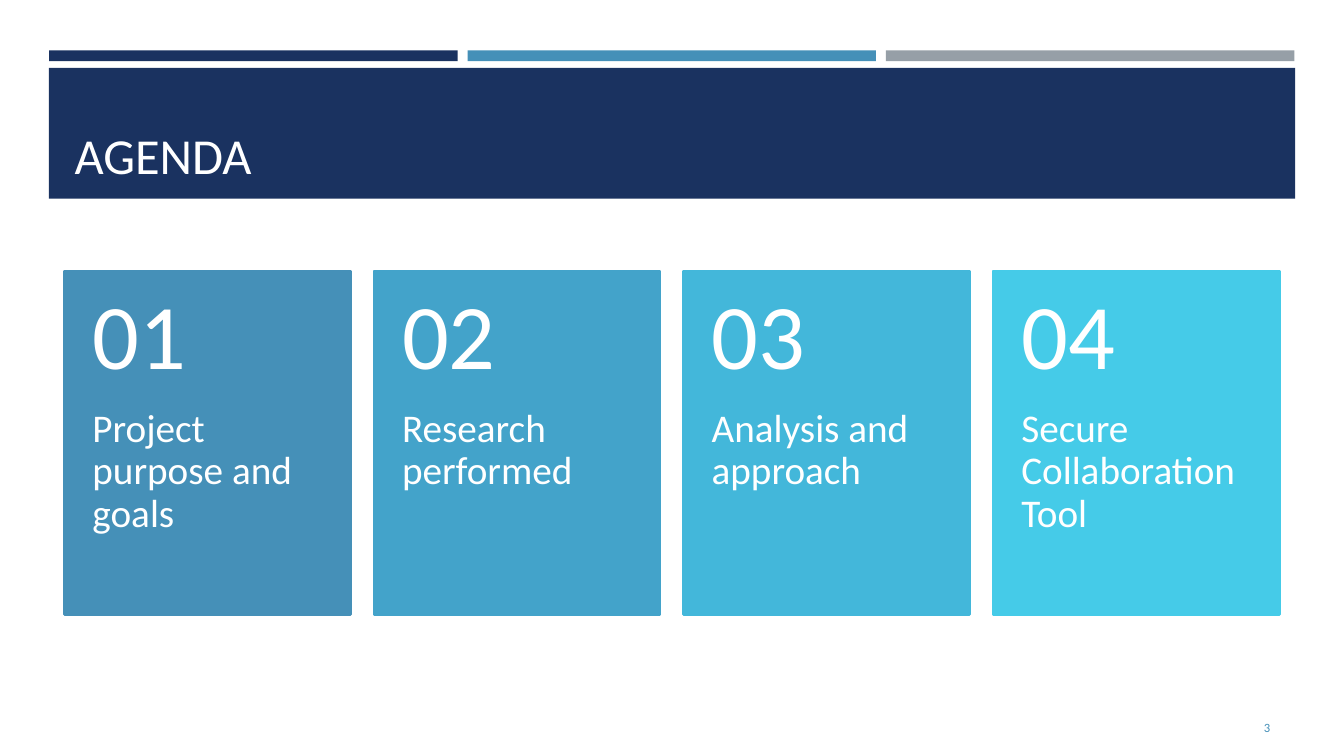
from pptx import Presentation
from pptx import util as u
from pptx.dml import color
from pptx.enum import shapes, text

COLORS = {
    "navy": "1A3260",
    "blue": "4590B8",
    "gray": "969FA7",
    "white": "FFFFFF",
    "card_2": "43A3CA",
    "card_3": "43B7DA",
    "card_4": "45CBE8",
}
FONT = "Calibri"
AGENDA = [
    ("Project purpose and goals", "blue"),
    ("Research performed", "card_2"),
    ("Analysis and approach", "card_3"),
    ("Secure Collaboration Tool", "card_4"),
]


def rgb(name):
    """Return the named palette colour."""
    return color.RGBColor.from_string(COLORS[name])


def add_block(slide, box, fill, border=None):
    """Draw a flat rectangle in the box, with an optional border in points."""
    block = slide.shapes.add_shape(shapes.MSO_SHAPE.RECTANGLE, *map(u.Cm, box))
    block.shadow.inherit = False
    block.fill.solid()
    block.fill.fore_color.rgb = rgb(fill)
    if border:
        block.line.color.rgb = rgb(fill)
        block.line.width = u.Pt(border)
    else:
        block.line.fill.background()


def add_words(slide, box, words, size, ink="white", anchor="TOP", align="LEFT",
              insets=(0.25, 0.13, 0.25, 0.13), spacing=1.0):
    """Write one paragraph of text in the box."""
    frame = slide.shapes.add_textbox(*map(u.Cm, box)).text_frame
    frame.word_wrap = True
    frame.vertical_anchor = getattr(text.MSO_ANCHOR, anchor)
    (frame.margin_left, frame.margin_top,
     frame.margin_right, frame.margin_bottom) = map(u.Cm, insets)
    paragraph = frame.paragraphs[0]
    paragraph.alignment = getattr(text.PP_ALIGN, align)
    paragraph.line_spacing = spacing
    run = paragraph.add_run()
    run.text = words
    run.font.name = FONT
    run.font.size = u.Pt(size)
    run.font.color.rgb = rgb(ink)


def add_accent_bars(slide, box, gap=0.25):
    """Split the box into three equal coloured bars."""
    left, top, width, height = box
    fills = ("navy", "blue", "gray")
    bar = (width - gap * (len(fills) - 1)) / len(fills)
    for index, fill in enumerate(fills):
        add_block(slide, (left + index * (bar + gap), top, bar, height), fill)


def add_banner(slide, box, title):
    """Fill the box with the banner and set the title at its foot."""
    left, top, width, height = box
    add_block(slide, box, "navy")
    add_words(slide, (left + 0.4, top + 0.25, width - 0.8, height - 0.48),
              title, 36, anchor="BOTTOM")


def add_card(slide, box, number, topic, fill):
    """Draw an agenda card with its number above its topic."""
    left, top, width, height = box
    number_height = height * 0.4
    add_block(slide, box, fill, border=1.75)
    add_words(slide, (left, top + number_height, width, height - number_height),
              topic, 28, insets=(0.71, 0, 0.71, 0.91), spacing=0.9)
    add_words(slide, (left, top, width, number_height), f"{number:02d}", 66,
              anchor="MIDDLE", insets=(0.71, 0.46, 0.71, 0.46), spacing=0.9)


def add_cards(slide, box, gap=0.59):
    """Spread the agenda cards evenly across the box."""
    left, top, width, height = box
    card = (width - gap * (len(AGENDA) - 1)) / len(AGENDA)
    for index, (topic, fill) in enumerate(AGENDA):
        add_card(slide, (left + index * (card + gap), top, card, height),
                 index + 1, topic, fill)


def add_page_number(slide, box, number):
    """Write the page number at the right of the box."""
    add_words(slide, box, str(number), 9, ink="blue", anchor="MIDDLE", align="RIGHT")


def main():
    """Build the agenda slide and save it."""
    deck = Presentation()
    deck.slide_width, deck.slide_height = u.Cm(33.87), u.Cm(19.05)
    slide = deck.slides.add_slide(deck.slide_layouts[6])
    add_accent_bars(slide, (1.24, 1.27, 31.38, 0.27))
    add_banner(slide, (1.23, 1.71, 31.41, 3.3), "AGENDA")
    add_cards(slide, (1.62, 6.83, 30.62, 8.66))
    add_page_number(slide, (29.34, 17.83, 2.92, 1.02), 3)
    deck.save("out.pptx")


if __name__ == "__main__":
    main()
